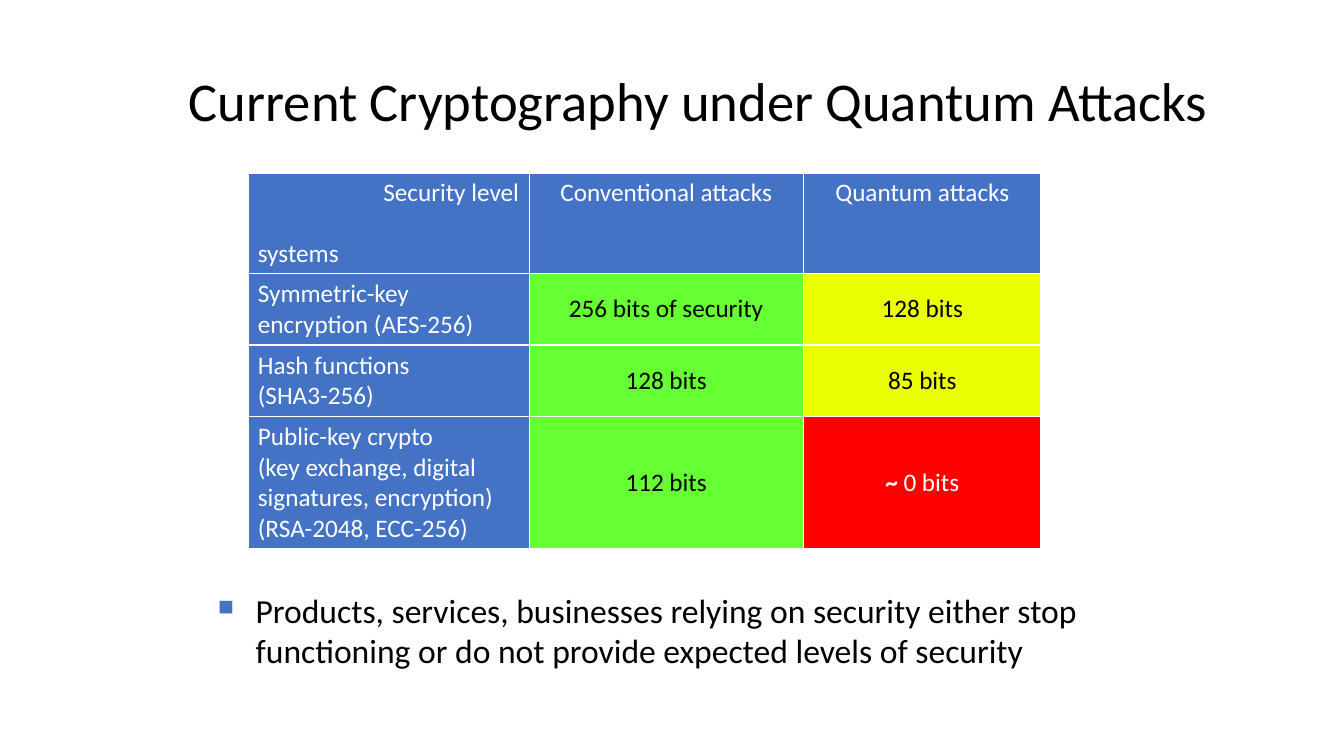
from dataclasses import dataclass

from lxml import etree
from pptx import Presentation
from pptx.dml.color import RGBColor
from pptx.enum.text import MSO_ANCHOR, PP_ALIGN
from pptx.oxml.ns import qn
from pptx.slide import Slide
from pptx.table import _Cell
from pptx.text.text import TextFrame, _Paragraph
from pptx.util import Pt

PX = 9525
FONT = "Calibri"
BLACK = RGBColor(0x00, 0x00, 0x00)
WHITE = RGBColor(0xFF, 0xFF, 0xFF)
BLUE = RGBColor(0x44, 0x72, 0xC4)
GREEN = RGBColor(0x66, 0xFF, 0x33)
YELLOW = RGBColor(0xEA, 0xFF, 0x00)
RED = RGBColor(0xFF, 0x00, 0x00)
LEFT, CENTER, RIGHT = PP_ALIGN.LEFT, PP_ALIGN.CENTER, PP_ALIGN.RIGHT
TOP, MIDDLE = MSO_ANCHOR.TOP, MSO_ANCHOR.MIDDLE
INNER_BORDER, OUTER_BORDER = Pt(1), Pt(2.25)
COLUMN_WIDTHS = (268, 261, 227)
ROW_HEIGHTS = (96, 68, 68, 126)


@dataclass(frozen=True)
class Entry:
    """Content and look of one table cell."""

    text: str
    fill: RGBColor
    color: RGBColor = BLACK
    align: PP_ALIGN = CENTER
    anchor: MSO_ANCHOR = MIDDLE
    bold_prefix: str = ""
    second_line: str = ""


def header(text: str) -> Entry:
    """Describe a column heading."""
    return Entry(text, BLUE, WHITE, anchor=TOP)


def system(text: str) -> Entry:
    """Describe a row heading."""
    return Entry(text, BLUE, WHITE, LEFT)


ROWS = (
    (
        Entry("Security level", BLUE, WHITE, RIGHT, TOP, second_line="systems"),
        header("Conventional attacks"),
        header("Quantum attacks"),
    ),
    (
        system("Symmetric-key encryption (AES-256)"),
        Entry("256 bits of security", GREEN),
        Entry("128 bits", YELLOW),
    ),
    (
        system("Hash functions\n(SHA3-256)"),
        Entry("128 bits", GREEN),
        Entry("85 bits", YELLOW),
    ),
    (
        system("Public-key crypto\n(key exchange, digital signatures, encryption)\n(RSA-2048, ECC-256)"),
        Entry("112 bits", GREEN),
        Entry(" 0 bits", RED, WHITE, bold_prefix="~"),
    ),
)


def style(para: _Paragraph, size: int, color: RGBColor, align: PP_ALIGN) -> None:
    """Set the font and alignment of a paragraph."""
    para.alignment = align
    para.font.name = FONT
    para.font.size = Pt(size)
    para.font.color.rgb = color


def add_text_box(page: Slide, left: int, top: int, width: int, height: int, anchor: MSO_ANCHOR) -> TextFrame:
    """Add a wrapping text box and return its text frame."""
    box = page.shapes.add_textbox(left * PX, top * PX, width * PX, height * PX)
    box.text_frame.word_wrap = True
    box.text_frame.vertical_anchor = anchor
    return box.text_frame


def add_bullet(para: _Paragraph, indent: int) -> None:
    """Give a paragraph a small blue square bullet."""
    properties = para._p.get_or_add_pPr()
    properties.set("marL", str(indent * PX))
    properties.set("indent", str(-indent * PX))
    color = etree.SubElement(properties, qn("a:buClr"))
    etree.SubElement(color, qn("a:srgbClr"), val=str(BLUE))
    etree.SubElement(properties, qn("a:buSzPct"), val="65000")
    etree.SubElement(properties, qn("a:buChar"), char="■")


def add_borders(cell: _Cell, row: int, column: int) -> None:
    """Draw white cell borders, wider on the left, top and right table edges."""
    outer_sides = {
        "a:lnL": column == 0,
        "a:lnR": column == len(COLUMN_WIDTHS) - 1,
        "a:lnT": row == 0,
        "a:lnB": False,
    }
    properties = cell._tc.get_or_add_tcPr()
    for side, is_outer in outer_sides.items():
        width = OUTER_BORDER if is_outer else INNER_BORDER
        line = etree.SubElement(properties, qn(side), w=str(int(width)))
        fill = etree.SubElement(line, qn("a:solidFill"))
        etree.SubElement(fill, qn("a:srgbClr"), val=str(WHITE))


def fill_cell(cell: _Cell, entry: Entry) -> None:
    """Write an entry into a table cell."""
    cell.vertical_anchor = entry.anchor
    cell.fill.solid()
    cell.fill.fore_color.rgb = entry.fill
    para = cell.text_frame.paragraphs[0]
    if entry.bold_prefix:
        span = para.add_run()
        span.text = entry.bold_prefix
        span.font.bold = True
        para.add_run().text = entry.text
    else:
        para.text = entry.text
    style(para, 18, entry.color, entry.align)
    if entry.second_line:
        para = cell.text_frame.add_paragraph()
        para.text = entry.second_line
        para.space_before = Pt(22)
        style(para, 18, entry.color, LEFT)


def add_security_table(page: Slide, left: int, top: int) -> None:
    """Add the table of security levels."""
    frame = page.shapes.add_table(
        len(ROW_HEIGHTS), len(COLUMN_WIDTHS), left * PX, top * PX,
        sum(COLUMN_WIDTHS) * PX, sum(ROW_HEIGHTS) * PX,
    )
    table = frame.table
    table.first_row = False
    table.horz_banding = False
    for column, width in zip(table.columns, COLUMN_WIDTHS):
        column.width = width * PX
    for row, height in zip(table.rows, ROW_HEIGHTS):
        row.height = height * PX
    for row_index, entries in enumerate(ROWS):
        for column_index, entry in enumerate(entries):
            cell = table.cell(row_index, column_index)
            add_borders(cell, row_index, column_index)
            fill_cell(cell, entry)


def main() -> None:
    """Build the slide and save it."""
    deck = Presentation()
    deck.slide_width, deck.slide_height = 1280 * PX, 720 * PX
    page = deck.slides.add_slide(deck.slide_layouts[6])

    title = add_text_box(page, 119, 46, 1092, 98, MIDDLE).paragraphs[0]
    title.text = "Current Cryptography under Quantum Attacks"
    style(title, 39, BLACK, CENTER)

    add_security_table(page, 236, 164)

    impact = add_text_box(page, 198, 557, 974, 158, TOP).paragraphs[0]
    impact.text = (
        "Products, services, businesses relying on security either stop "
        "functioning or do not provide expected levels of security"
    )
    add_bullet(impact, 36)
    style(impact, 24, BLACK, LEFT)

    deck.save("out.pptx")


if __name__ == "__main__":
    main()
